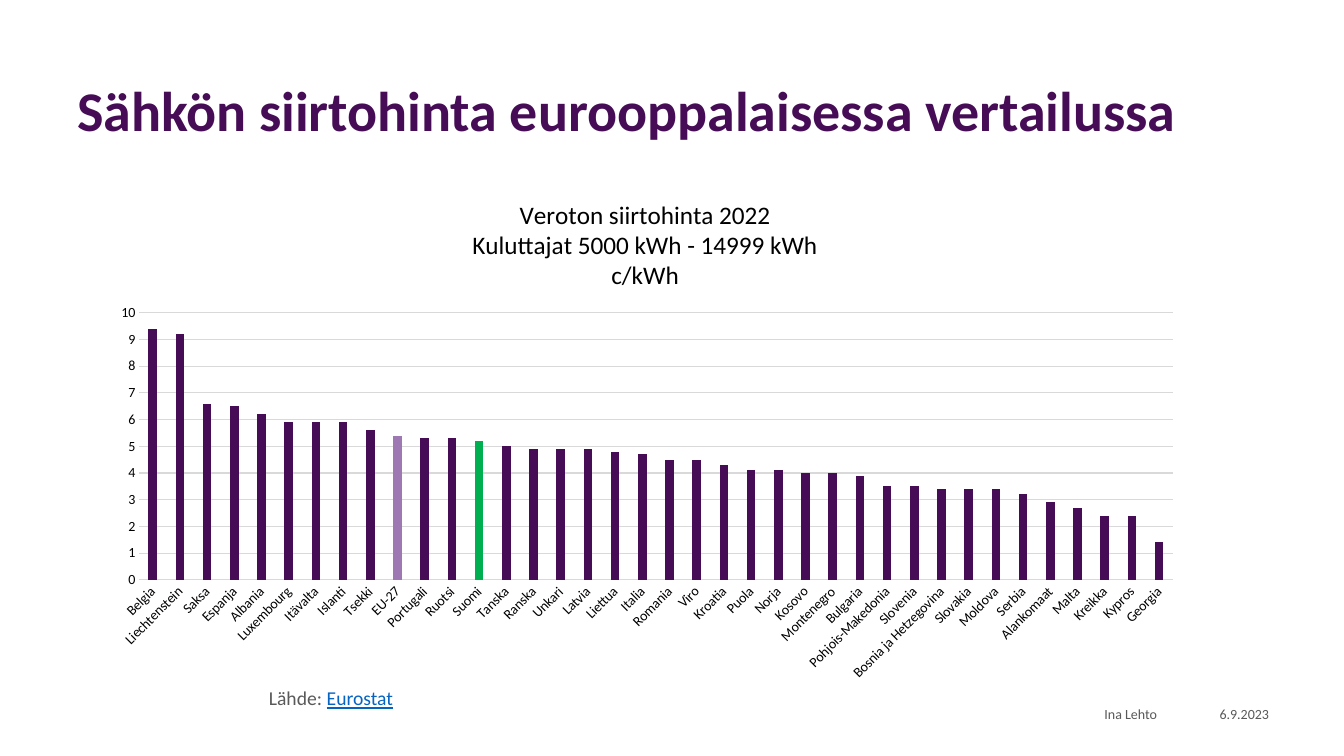
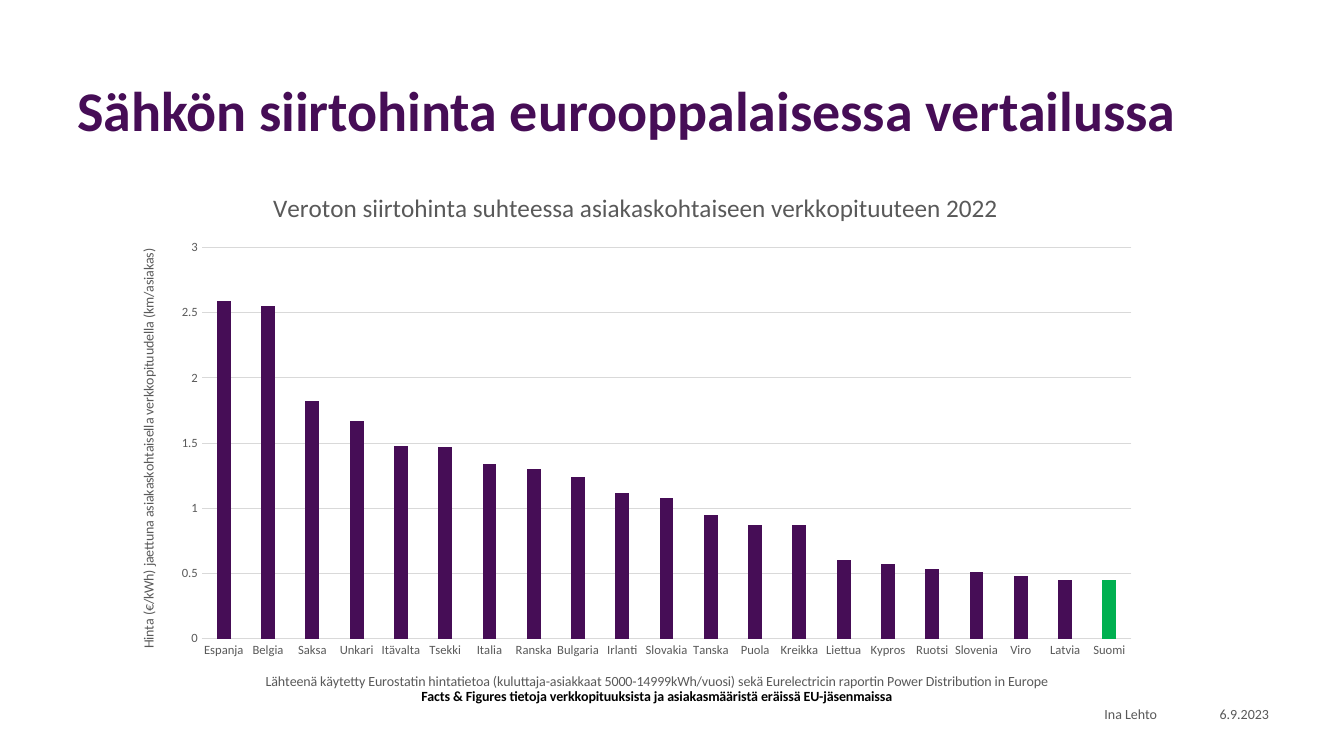
from lxml.etree import SubElement
from pptx import Presentation
from pptx.chart.data import CategoryChartData
from pptx.dml.color import RGBColor
from pptx.enum.chart import XL_CHART_TYPE, XL_TICK_MARK
from pptx.enum.text import MSO_ANCHOR, PP_ALIGN
from pptx.oxml.ns import qn
from pptx.util import Pt

PURPLE = RGBColor(0x46, 0x0D, 0x56)
LILAC = RGBColor(0x9E, 0x78, 0xB2)
GREEN = RGBColor(0x00, 0xB0, 0x50)
GREY = RGBColor(0x59, 0x59, 0x59)
GRID = RGBColor(0xD9, 0xD9, 0xD9)
LINK = RGBColor(0x05, 0x63, 0xC1)
BLACK = RGBColor(0x00, 0x00, 0x00)
FONT = "Calibri"

HEADING = "Sähkön siirtohinta eurooppalaisessa vertailussa"
HEADING_BOX = (48, 29, 844, 104)
AUTHOR_BOX = (533.5, 500.4, 300, 19.4)
DATE_BOX = (833.5, 500.4, 80, 19.4)

TRANSFER_PRICES = {
    "Belgia": 9.4, "Liechtenstein": 9.2, "Saksa": 6.6, "Espanja": 6.5,
    "Albania": 6.2, "Luxembourg": 5.9, "Itävalta": 5.9, "Islanti": 5.9,
    "Tsekki": 5.6, "EU-27": 5.4, "Portugali": 5.3, "Ruotsi": 5.3,
    "Suomi": 5.2, "Tanska": 5, "Ranska": 4.9, "Unkari": 4.9,
    "Latvia": 4.9, "Liettua": 4.8, "Italia": 4.7, "Romania": 4.5,
    "Viro": 4.5, "Kroatia": 4.3, "Puola": 4.1, "Norja": 4.1,
    "Kosovo": 4, "Montenegro": 4, "Bulgaria": 3.9,
    "Pohjois-Makedonia": 3.5, "Slovenia": 3.5,
    "Bosnia ja Hetzegovina": 3.4, "Slovakia": 3.4, "Moldova": 3.4,
    "Serbia": 3.2, "Alankomaat": 2.9, "Malta": 2.7, "Kreikka": 2.4,
    "Kypros": 2.4, "Georgia": 1.4,
}
PRICES_PER_NETWORK_LENGTH = {
    "Espanja": 2.59, "Belgia": 2.55, "Saksa": 1.82, "Unkari": 1.67,
    "Itävalta": 1.48, "Tsekki": 1.47, "Italia": 1.34, "Ranska": 1.3,
    "Bulgaria": 1.24, "Irlanti": 1.12, "Slovakia": 1.08, "Tanska": 0.95,
    "Puola": 0.87, "Kreikka": 0.87, "Liettua": 0.6, "Kypros": 0.57,
    "Ruotsi": 0.53, "Slovenia": 0.51, "Viro": 0.48, "Latvia": 0.45,
    "Suomi": 0.45,
}
HIGHLIGHTS = {"EU-27": LILAC, "Suomi": GREEN}


def style_font(font, size, color=GREY, bold=False, underline=None):
    font.name, font.size, font.bold = FONT, Pt(size), bold
    font.color.rgb = color
    if underline:
        font.underline = True


def add_text(slide, box, *runs, align=PP_ALIGN.LEFT, anchor=MSO_ANCHOR.MIDDLE,
             spacing=None, **font_format):
    """Place one line of text; each run is a string or (string, format)."""
    frame = slide.shapes.add_textbox(*map(Pt, box)).text_frame
    frame.word_wrap = True
    frame.vertical_anchor = anchor
    paragraph = frame.paragraphs[0]
    paragraph.alignment = align
    if spacing:
        paragraph.line_spacing = spacing
    for item in runs:
        text, changes = (item, {}) if isinstance(item, str) else item
        run = paragraph.add_run()
        run.text = text
        style_font(run.font, **{**font_format, **changes})


def fill_title(frame, *lines, rotation=None):
    """Fill a chart or axis title with (text, format) lines."""
    for index, (text, font_format) in enumerate(lines):
        paragraph = frame.paragraphs[0] if index == 0 else frame.add_paragraph()
        run = paragraph.add_run()
        run.text = text
        style_font(run.font, **font_format)
    if rotation is not None:
        rotate(frame._txBody, rotation)


def rotate(text_body, degrees):
    body_properties = text_body.find(qn("a:bodyPr"))
    body_properties.set("rot", str(degrees * 60000))
    body_properties.set("vert", "horz")


def fix_plot_area(chart, x, y, w, h):
    """Set the inner plot area as fractions of the chart."""
    plot_area = chart._chartSpace.chart.plotArea
    for old in plot_area.findall(qn("c:layout")):
        plot_area.remove(old)
    layout = plot_area.makeelement(qn("c:layout"), {})
    plot_area.insert(0, layout)
    manual = SubElement(layout, qn("c:manualLayout"))
    settings = {"layoutTarget": "inner", "xMode": "edge", "yMode": "edge",
                "x": x, "y": y, "w": w, "h": h}
    for tag, value in settings.items():
        SubElement(manual, qn(f"c:{tag}")).set("val", str(value))


def add_price_chart(slide, box, prices, title_lines, plot_box, top, step,
                    label_size, label_color, title_color):
    data = CategoryChartData()
    data.categories = list(prices)
    data.add_series("Series 1", list(prices.values()))
    chart = slide.shapes.add_chart(
        XL_CHART_TYPE.COLUMN_CLUSTERED, *map(Pt, box), data).chart
    style_font(chart.font, 10, BLACK)
    chart.has_legend = False
    chart.has_title = True
    chart.chart_title.include_in_layout = False
    fill_title(chart.chart_title.text_frame,
               *((line, {"size": 18, "color": title_color}) for line in title_lines))
    fix_plot_area(chart, *plot_box)

    plot = chart.plots[0]
    plot.gap_width, plot.overlap, plot.vary_by_categories = 219, -27, False
    columns = plot.series[0]
    columns.invert_if_negative = False
    columns.format.fill.solid()
    columns.format.fill.fore_color.rgb = PURPLE
    for index, country in enumerate(prices):
        if country in HIGHLIGHTS:
            fill = columns.points[index].format.fill
            fill.solid()
            fill.fore_color.rgb = HIGHLIGHTS[country]

    countries, scale = chart.category_axis, chart.value_axis
    for axis in (countries, scale):
        axis.major_tick_mark = axis.minor_tick_mark = XL_TICK_MARK.NONE
        style_font(axis.tick_labels.font, label_size, label_color)
    scale.minimum_scale, scale.maximum_scale, scale.major_unit = 0, top, step
    scale.has_major_gridlines = True
    scale.format.line.fill.background()
    for line in (countries.format.line, scale.major_gridlines.format.line):
        line.color.rgb = GRID
        line.width = Pt(0.75)
    return chart


def add_frame(prs):
    """Add a slide with the shared heading and footer."""
    slide = prs.slides.add_slide(prs.slide_layouts[6])
    add_text(slide, HEADING_BOX, HEADING, size=40, color=PURPLE, bold=True,
             spacing=0.9)
    for box, text in ((DATE_BOX, "6.9.2023"), (AUTHOR_BOX, "Ina Lehto")):
        add_text(slide, box, text, size=10, align=PP_ALIGN.RIGHT)
    return slide


def add_transfer_price_slide(prs):
    slide = add_frame(prs)
    chart = add_price_chart(
        slide, (68, 128, 785.5, 367), TRANSFER_PRICES,
        ("Veroton siirtohinta 2022", "Kuluttajat 5000 kWh - 14999 kWh", "c/kWh"),
        plot_box=(0.04, 0.26, 0.94, 0.52), top=10, step=1,
        label_size=10, label_color=BLACK, title_color=BLACK)
    rotate(chart.category_axis._element.find(qn("c:txPr")), -45)
    add_text(slide, (185, 486.5, 381.5, 24.5), "Lähde: ",
             ("Eurostat", {"color": LINK, "underline": True}),
             size=14, anchor=MSO_ANCHOR.TOP)


def add_network_length_slide(prs):
    slide = add_frame(prs)
    chart = add_price_chart(
        slide, (85, 121, 738, 399), PRICES_PER_NETWORK_LENGTH,
        ("Veroton siirtohinta suhteessa asiakaskohtaiseen verkkopituuteen 2022",),
        plot_box=(0.08, 0.14, 0.9, 0.7), top=3, step=0.5,
        label_size=9, label_color=GREY, title_color=GREY)
    fill_title(
        chart.category_axis.axis_title.text_frame,
        ("Lähteenä käytetty Eurostatin hintatietoa (kuluttaja-asiakkaat "
         "5000-14999kWh/vuosi) sekä Eurelectricin raportin Power Distribution "
         "in Europe", {"size": 10}),
        ("Facts & Figures tietoja verkkopituuksista ja asiakasmääristä eräissä "
         "EU-jäsenmaissa", {"size": 10, "color": BLACK, "bold": True}))
    fill_title(
        chart.value_axis.axis_title.text_frame,
        ("Hinta (€/kWh) jaettuna asiakaskohtaisella verkkopituudella "
         "(km/asiakas)", {"size": 10}), rotation=-90)


def main():
    prs = Presentation()
    prs.slide_width, prs.slide_height = Pt(960), Pt(540)
    add_transfer_price_slide(prs)
    add_network_length_slide(prs)
    prs.save("out.pptx")


if __name__ == "__main__":
    main()
